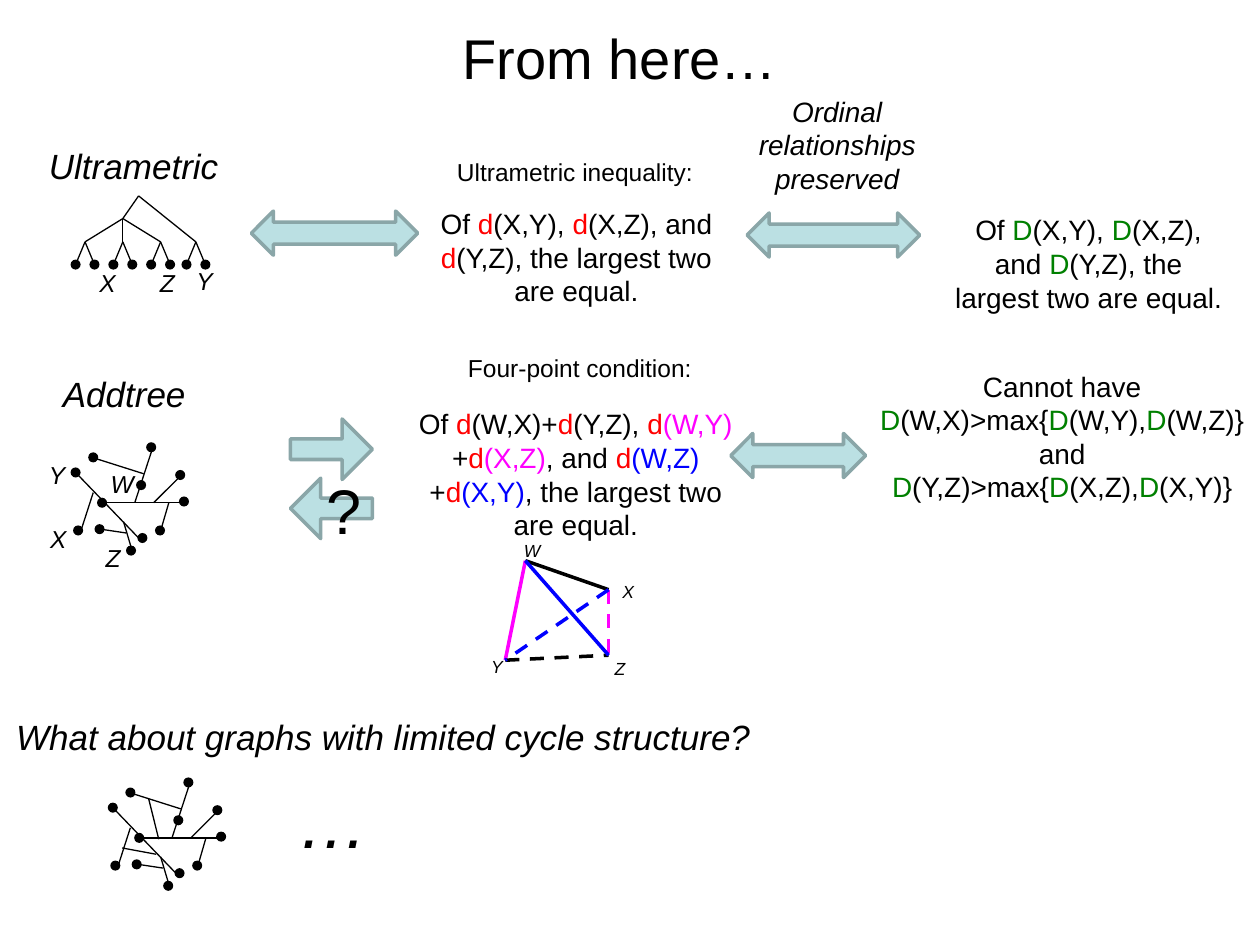
from pptx import Presentation
from pptx.dml.color import RGBColor
from pptx.enum.dml import MSO_LINE
from pptx.enum.shapes import MSO_CONNECTOR, MSO_SHAPE
from pptx.enum.text import MSO_ANCHOR, MSO_AUTO_SIZE, PP_ALIGN
from pptx.oxml.ns import qn
from pptx.util import Inches, Pt
from lxml import etree

LINE, DASH = MSO_CONNECTOR.STRAIGHT, MSO_LINE.DASH
OVAL, DOWN, DOUBLE = MSO_SHAPE.OVAL, MSO_SHAPE.DOWN_ARROW, MSO_SHAPE.UP_DOWN_ARROW
TOP, MID, GROW = MSO_ANCHOR.TOP, MSO_ANCHOR.MIDDLE, MSO_AUTO_SIZE.SHAPE_TO_FIT_TEXT
ALIGN = {"l": PP_ALIGN.LEFT, "c": PP_ALIGN.CENTER, "r": PP_ALIGN.RIGHT}

THEME = {
    "font": "Arial",
    "k": "000000", "r": "FF0000", "g": "008000", "m": "FF00FF", "b": "0000FF",
    "fill": "BBE0E3", "edge": "8AA6A8",
    "title": 32, "head": 20, "body": 16, "note": 14, "tiny": 10, "ask": 36, "dots": 40,
    "thin": 0.75, "thick": 2,
}
COLS, ROWS = 1000, 750
CELL = Inches(10) // COLS
DOT = 8

TITLE = ("From here…", (13, -17, 958, 125))
HEADS = [
    ("Ultrametric", (29, 110, 156, 44)),
    ("Addtree", (40, 291, 118, 44)),
    ("What about graphs with limited cycle structure?", (3, 563, 607, 44)),
]
NOTES = [
    ("Ultrametric inequality:", (352, 120, 208, 34)),
    ("Four-point condition:", (361, 275, 198, 34)),
]
ORDER = ("Ordinal relationships preserved", (568, 70, 193, 91))
RULES = [
    ("Of |r:d|(X,Y), |r:d|(X,Z), and |r:d|(Y,Z), the largest two are equal.",
     (331, 159, 253, 91)),
    ("Of|g: D|(X,Y), |g:D|(X,Z), and |g:D|(Y,Z), the largest two are equal.",
     (746, 164, 236, 91)),
    ("Of |r:d|(W,X)+|r:d|(Y,Z), |r:d|m:(W,Y)|+|r:d|m:(X,Z)|, and |r:d|b:(W,Z)|+"
     "|r:d|b:(X,Y)|, the largest two are equal.", (322, 318, 270, 118)),
    ("Cannot have |g:D|(W,X)>max{|g:D|(W,Y),|g:D|(W,Z)} and "
     "|g:D|(Y,Z)>max{|g:D|(X,Z),|g:D|(X,Y)}", (680, 288, 326, 118)),
]
ARROWS = [
    (DOUBLE, (248, 119, 35, 132), 270),
    (DOUBLE, (644, 118, 35, 137), 270),
    (DOUBLE, (616, 308, 35, 107), 270),
    (DOWN, (239, 324, 48, 65), 270),
    (DOWN, (239, 371, 48, 65), 90),
]
ASK = ("?", (249, 369, 48, 71))
MORE = ("…", (227, 613, 76, 77))

NAMES = [
    ("X", (69, 208, 33, 34)), ("Z", (117, 208, 32, 34)), ("Y", (146, 206, 33, 34)),
    ("W", (78, 367, 39, 34)), ("Y", (29, 360, 33, 34)),
    ("Z", (74, 426, 32, 34)), ("X", (30, 411, 33, 34)),
]
LEAVES = [60, 75, 90, 105, 120, 135, 148, 163]
LEAF_ROW, NODE_ROW, FORK, ROOT = 210, 192, (97.5, 173.5), (110, 155.5)

EDGES = [
    (61, 376, 112, 429), (83, 399, 144, 399), (107, 399, 122, 353),
    (64, 422, 74, 391), (104, 434, 98, 414), (73, 363, 114, 376),
    (122, 399, 145, 376), (127, 423, 134, 399), (80, 420, 100, 423),
]
NODES = [
    (143, 377), (146, 398), (74, 363), (62, 421), (79, 420), (104, 437),
    (127, 421), (113, 427), (60, 375), (120, 355), (112, 385), (81, 399),
]
CYCLES = [(124, 678, 97, 673), (118, 634, 126, 666)]
SHIFTS = [(0, 0), (29.5, 266)]

POINTS = {"W": (417, 445), "X": (483, 468), "Y": (401, 524), "Z": (483, 520)}
SIDES = [("WY", "m", None), ("YZ", "k", DASH), ("WX", "k", None),
         ("XZ", "m", DASH), ("XY", "b", DASH), ("WZ", "b", None)]
CORNERS = [("W", (406, 424, 34, 27)), ("Y", (380, 516, 29, 27)),
           ("Z", (478, 517, 29, 27)), ("X", (484, 456, 29, 27))]


def cells(*nums):
    return [int(n * CELL) for n in nums]


def rgb(key):
    return RGBColor.from_string(THEME[key])


def text(slide, words, box, size, side="l", slant=False, wrap=False, anchor=TOP):
    frame = slide.shapes.add_textbox(*cells(*box)).text_frame
    frame.word_wrap, frame.vertical_anchor = wrap, anchor
    frame.auto_size = GROW if anchor == TOP else MSO_AUTO_SIZE.NONE
    para = frame.paragraphs[0]
    para.alignment = ALIGN[side]
    for part in words.split("|"):
        tag = part[0] if part[1:2] == ":" else "k"
        run = para.add_run()
        run.text = part[2:] if part[1:2] == ":" else part
        font = run.font
        font.name, font.size, font.italic = THEME["font"], Pt(THEME[size]), slant
        font.color.rgb = rgb(tag)


def line(slide, ends, tone="k", width="thin", dash=None):
    link = slide.shapes.add_connector(LINE, *cells(*ends))
    link.line.color.rgb, link.line.width = rgb(tone), Pt(THEME[width])
    if dash:
        link.line.dash_style = dash
    etree.SubElement(link._element.spPr, qn("a:effectLst"))


def shape(slide, kind, box, fill):
    item = slide.shapes.add_shape(kind, *cells(*box))
    item.shadow.inherit = False
    item.fill.solid()
    item.fill.fore_color.rgb = rgb(fill)
    item.line.fill.background()
    return item


def dot(slide, x, y):
    shape(slide, OVAL, (x - DOT / 2, y - DOT / 2, DOT, DOT), "k")


def arrow(slide, kind, box, turn):
    item = shape(slide, kind, box, "fill")
    item.rotation = turn
    item.line.color.rgb, item.line.width = rgb("edge"), Pt(THEME["thick"])
    if kind == DOWN:
        item.adjustments[0] = 0.34


def tree(slide):
    tops = []
    for pair in zip(LEAVES[::2], LEAVES[1::2]):
        tops.append((sum(pair) / 2, NODE_ROW))
        for x in pair:
            line(slide, (x, LEAF_ROW, *tops[-1]))
            dot(slide, x, LEAF_ROW)
    for top in tops[:3]:
        line(slide, (*top, *FORK))
    for end in (FORK, tops[3]):
        line(slide, (*end, *ROOT))


def graph(slide, dx, dy):
    for a, b, c, d in EDGES:
        line(slide, (a + dx, b + dy, c + dx, d + dy))
    for x, y in NODES:
        dot(slide, x + dx, y + dy)


def main():
    deck = Presentation()
    deck.slide_width, deck.slide_height = cells(COLS, ROWS)
    slide = deck.slides.add_slide(deck.slide_layouts[6])
    text(slide, *TITLE, "title", "c", wrap=True, anchor=MID)
    tree(slide)
    for shift in SHIFTS:
        graph(slide, *shift)
    for ends in CYCLES:
        line(slide, ends)
    for (a, b), tone, dash in SIDES:
        line(slide, POINTS[a] + POINTS[b], tone, "thick", dash)
    for spec in ARROWS:
        arrow(slide, *spec)
    for item in HEADS:
        text(slide, *item, "head", slant=True)
    for item in NOTES:
        text(slide, *item, "note", "r")
    for item in RULES:
        text(slide, *item, "body", "c", wrap=True)
    text(slide, *ORDER, "body", "c", slant=True, wrap=True)
    for item in NAMES:
        text(slide, *item, "note", slant=True)
    for item in CORNERS:
        text(slide, *item, "tiny", slant=True)
    text(slide, *ASK, "ask")
    text(slide, *MORE, "dots", slant=True)
    deck.save("out.pptx")


if __name__ == "__main__":
    main()
